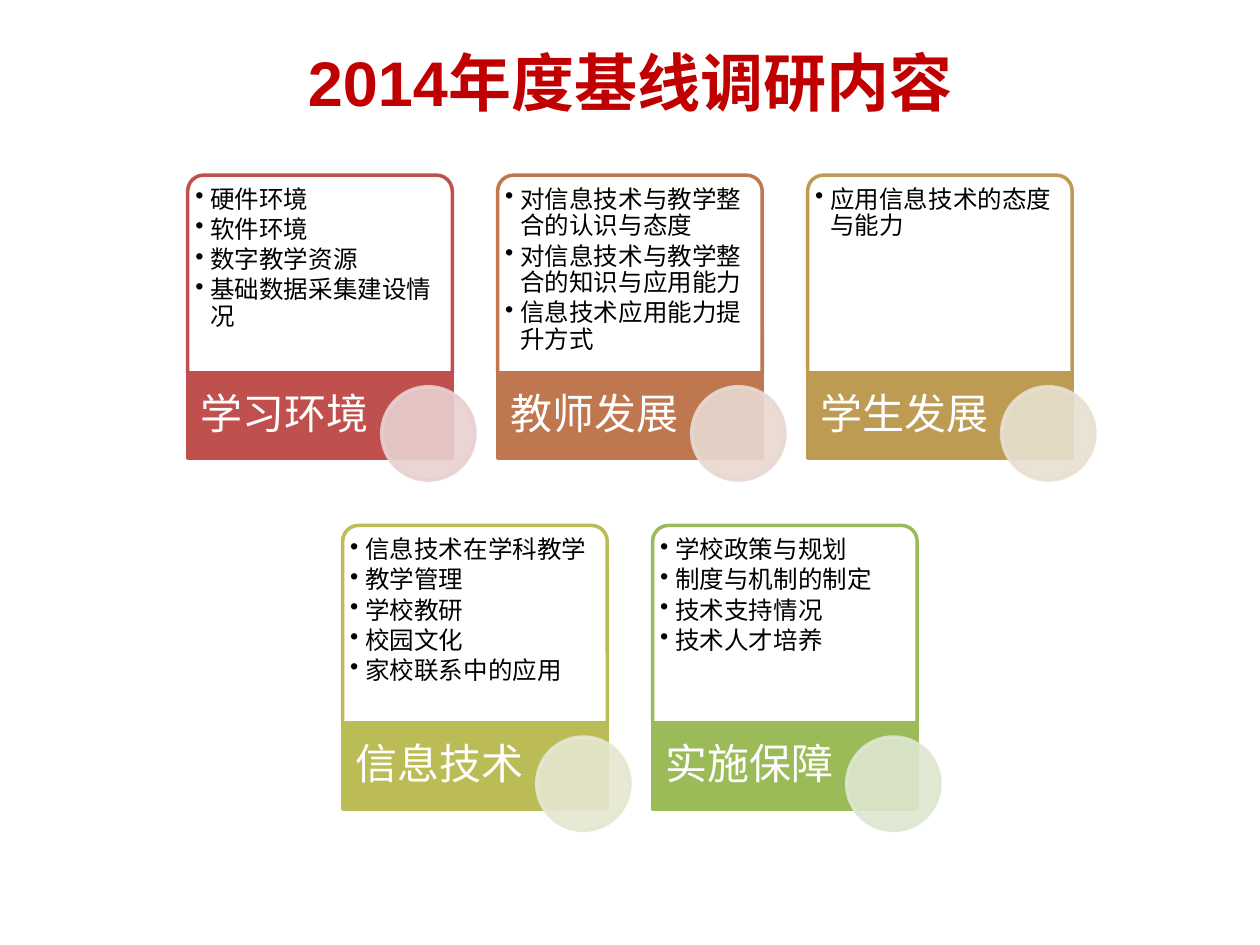
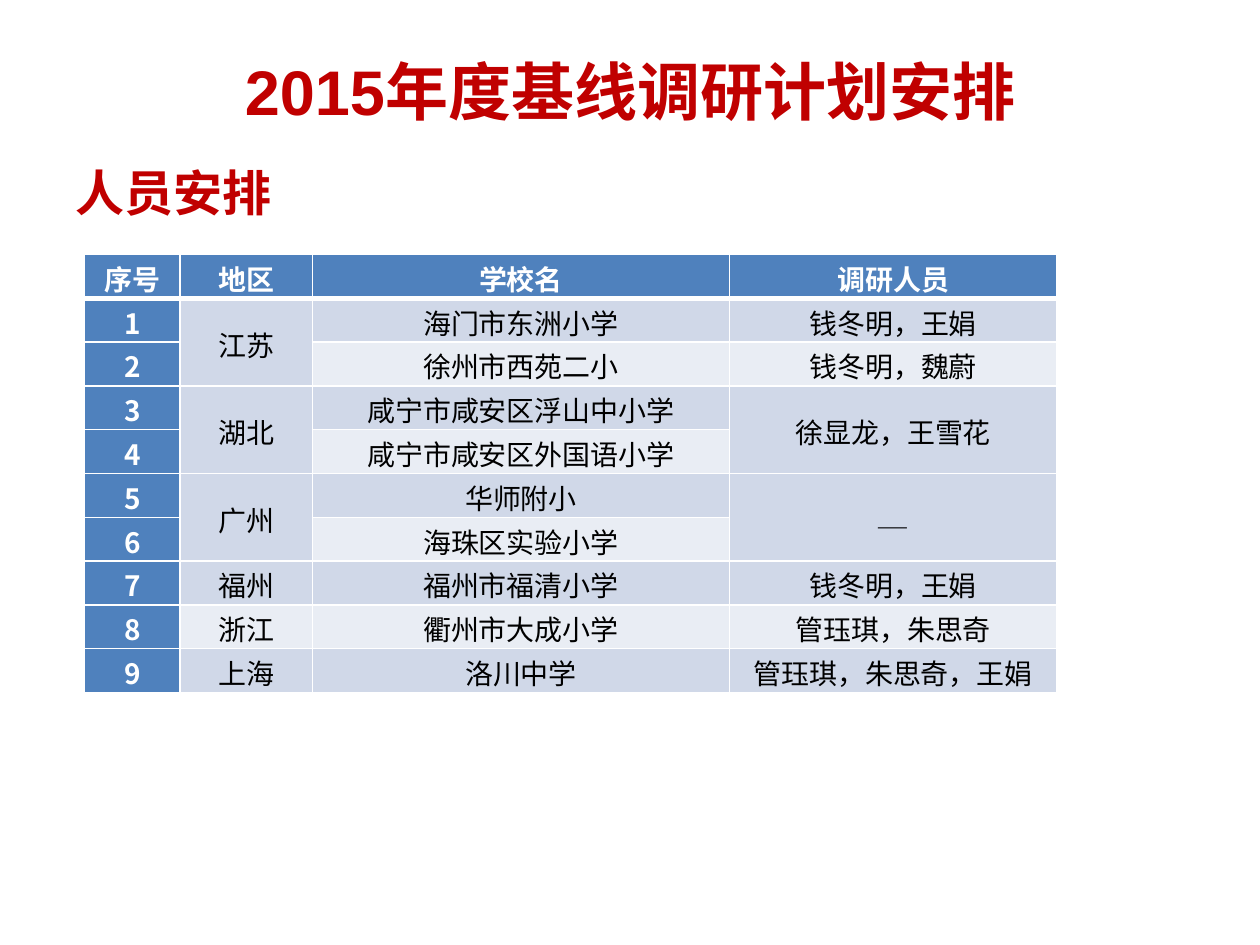
"""Build two slides on the baseline survey: its contents and its staffing plan."""
from lxml.etree import SubElement
from pptx import Presentation
from pptx.dml.color import RGBColor
from pptx.enum.shapes import MSO_SHAPE as Shape
from pptx.enum.text import MSO_ANCHOR as Anchor, PP_ALIGN as Align
from pptx.oxml.ns import qn
from pptx.util import Pt

RED = RGBColor(0xC0, 0x00, 0x00)
WHITE = RGBColor(0xFF, 0xFF, 0xFF)
BLACK = RGBColor(0x00, 0x00, 0x00)
BLUE = RGBColor(0x4F, 0x81, 0xBD)
STRIPES = RGBColor(0xE9, 0xED, 0xF4), RGBColor(0xD0, 0xD8, 0xE8)
CJK = "Noto Sans CJK SC"

TOPICS = [
    [
        ("学习环境", RGBColor(0xC0, 0x50, 0x4D), RGBColor(0xE8, 0xD0, 0xD0),
         ["硬件环境", "软件环境", "数字教学资源", "基础数据采集建设情况"]),
        ("教师发展", RGBColor(0xBF, 0x77, 0x50), RGBColor(0xE8, 0xD9, 0xD0),
         ["对信息技术与教学整合的认识与态度", "对信息技术与教学整合的知识与应用能力",
          "信息技术应用能力提升方式"]),
        ("学生发展", RGBColor(0xBD, 0x9B, 0x53), RGBColor(0xE8, 0xE1, 0xD1),
         ["应用信息技术的态度与能力"]),
    ],
    [
        ("信息技术", RGBColor(0xBC, 0xBC, 0x56), RGBColor(0xE6, 0xE7, 0xD1),
         ["信息技术在学科教学", "教学管理", "学校教研", "校园文化", "家校联系中的应用"]),
        ("实施保障", RGBColor(0x9B, 0xBB, 0x59), RGBColor(0xDE, 0xE7, 0xD1),
         ["学校政策与规划", "制度与机制的制定", "技术支持情况", "技术人才培养"]),
    ],
]
STAFFING = [
    ("序号", "地区", "学校名", "调研人员"),
    ("1", "江苏", "海门市东洲小学", "钱冬明，王娟"),
    ("2", None, "徐州市西苑二小", "钱冬明，魏蔚"),
    ("3", "湖北", "咸宁市咸安区浮山中小学", "徐显龙，王雪花"),
    ("4", None, "咸宁市咸安区外国语小学", None),
    ("5", "广州", "华师附小", "——"),
    ("6", None, "海珠区实验小学", None),
    ("7", "福州", "福州市福清小学", "钱冬明，王娟"),
    ("8", "浙江", "衢州市大成小学", "管珏琪，朱思奇"),
    ("9", "上海", "洛川中学", "管珏琪，朱思奇，王娟"),
]
COLUMN_WIDTHS = [54.72, 75.6, 238.32, 187.2]
ROW_HEIGHT = 25

SLIDE_W, SLIDE_H = 720, 540
CARD_W, BODY_H, BAND_H = 151.2, 113.04, 48.96
CARD_PITCH, ROW_PITCH, CARDS_TOP = 177.12, 200.16, 100.08
DISC, DISC_X, DISC_Y = 53.28, 110.88, 7.92


def style_paragraph(paragraph, size, color, latin=CJK, bold=False, align=Align.LEFT):
    paragraph.alignment = align
    for run in paragraph.runs:
        font = run.font
        font.name, font.size, font.bold = latin, Pt(size), bold
        font.color.rgb = color
        SubElement(font._element, qn("a:ea"), typeface=CJK)


def add_text(slide, box, lines, size, color, latin=CJK, bold=False, align=Align.LEFT,
             anchor=Anchor.TOP, insets=(7.2, 3.6, 7.2, 3.6), spacing=1.0, after=0, bullet=False):
    frame = slide.shapes.add_textbox(*map(Pt, box)).text_frame
    frame.word_wrap, frame.vertical_anchor = True, anchor
    (frame.margin_left, frame.margin_top,
     frame.margin_right, frame.margin_bottom) = map(Pt, insets)
    frame.text = "\n".join(lines)
    for paragraph in frame.paragraphs:
        paragraph.line_spacing, paragraph.space_after = spacing, Pt(after)
        if bullet:
            properties = paragraph._p.get_or_add_pPr()
            properties.set("marL", str(Pt(8.64)))
            properties.set("indent", str(-Pt(8.64)))
            SubElement(properties, qn("a:buChar"), char="•")
        style_paragraph(paragraph, size, color, latin, bold, align)


def add_title(slide, title, top, height):
    add_text(slide, (0, top, SLIDE_W, height), [title], 36, RED, "Arial", True,
             Align.CENTER, Anchor.MIDDLE)


def make_translucent(fill_owner):
    for color in fill_owner.iter(qn("a:srgbClr")):
        SubElement(color, qn("a:alpha"), val="90000")


def add_panel(slide, kind, box, fill, line):
    panel = slide.shapes.add_shape(kind, *map(Pt, box))
    panel.shadow.inherit = False
    panel.fill.solid()
    panel.fill.fore_color.rgb = fill
    panel.line.color.rgb = line
    panel.line.width = Pt(2)
    return panel


def add_card(slide, left, top, topic):
    name, accent, tint, points = topic
    band_top = top + BODY_H
    body = add_panel(slide, Shape.ROUND_2_SAME_RECTANGLE, (left, top, CARD_W, BODY_H), WHITE, accent)
    body.adjustments[0], body.adjustments[1] = 0.08, 0
    make_translucent(body._element.spPr.find(qn("a:solidFill")))
    add_text(slide, (left + 2.88, top + 2.66, 146.16, 110.16), points, 14, BLACK,
             insets=(1.44, 4.32, 1.44, 1.44), spacing=0.9, after=2.1, bullet=True)
    add_panel(slide, Shape.RECTANGLE, (left, band_top, CARD_W, BAND_H), accent, accent)
    add_text(slide, (left, band_top, 106.56, BAND_H), [name], 24, WHITE, "Cabin",
             anchor=Anchor.MIDDLE, insets=(7.2, 0, 2.16, 0), spacing=0.9)
    disc = add_panel(slide, Shape.OVAL, (left + DISC_X, band_top + DISC_Y, DISC, DISC), tint, tint)
    make_translucent(disc._element.spPr)


def add_border(cell, side, width):
    line = SubElement(cell._tc.get_or_add_tcPr(), qn(f"a:{side}"), w=str(Pt(width)))
    SubElement(SubElement(line, qn("a:solidFill")), qn("a:srgbClr"), val=str(WHITE))


def style_cell(cell, row, column, text):
    heading = row == 0 or column == 0
    for side in ("lnL", "lnR", "lnT", "lnB"):
        touches_header = (row, side) in ((0, "lnB"), (1, "lnT"))
        add_border(cell, side, 3 if touches_header else 1)
    cell.fill.solid()
    cell.fill.fore_color.rgb = BLUE if heading else STRIPES[row % 2]
    cell.margin_left = cell.margin_right = Pt(5.04)
    cell.margin_top = cell.margin_bottom = 0
    cell.vertical_anchor = Anchor.MIDDLE if row and column in (1, 3) else Anchor.TOP
    if text:
        cell.text_frame.text = text
        paragraph = cell.text_frame.paragraphs[0]
        paragraph.line_spacing = Pt(ROW_HEIGHT)
        style_paragraph(paragraph, 10.5 if text == "——" else 16,
                        WHITE if heading else BLACK, bold=heading, align=Align.CENTER)


def add_staffing_table(slide, left, top):
    table = slide.shapes.add_table(
        len(STAFFING), len(COLUMN_WIDTHS), Pt(left), Pt(top),
        Pt(sum(COLUMN_WIDTHS)), Pt(ROW_HEIGHT * len(STAFFING))).table
    for column, width in zip(table.columns, COLUMN_WIDTHS):
        column.width = Pt(width)
    for row, entries in enumerate(STAFFING):
        table.rows[row].height = Pt(ROW_HEIGHT)
        for column, text in enumerate(entries):
            style_cell(table.cell(row, column), row, column, text)
            if text is None:
                table.cell(row - 1, column).merge(table.cell(row, column))


def main():
    deck = Presentation()
    deck.slide_width, deck.slide_height = Pt(SLIDE_W), Pt(SLIDE_H)
    contents, plan = (deck.slides.add_slide(deck.slide_layouts[6]) for _ in range(2))

    add_title(contents, "2014年度基线调研内容", 15.12, 62.64)
    for row, topics in enumerate(TOPICS):
        row_left = (SLIDE_W - CARD_W - CARD_PITCH * (len(topics) - 1)) / 2
        for column, topic in enumerate(topics):
            add_card(contents, row_left + column * CARD_PITCH, CARDS_TOP + row * ROW_PITCH, topic)

    add_title(plan, "2015年度基线调研计划安排", 25.92, 51.12)
    add_text(plan, (36, 82.8, 648, 62.64), ["人员安排"], 28, RED, "Arial", True,
             Align.JUSTIFY, spacing=1.2)
    add_staffing_table(plan, 48.24, 145.44)
    deck.save("out.pptx")


if __name__ == "__main__":
    main()
